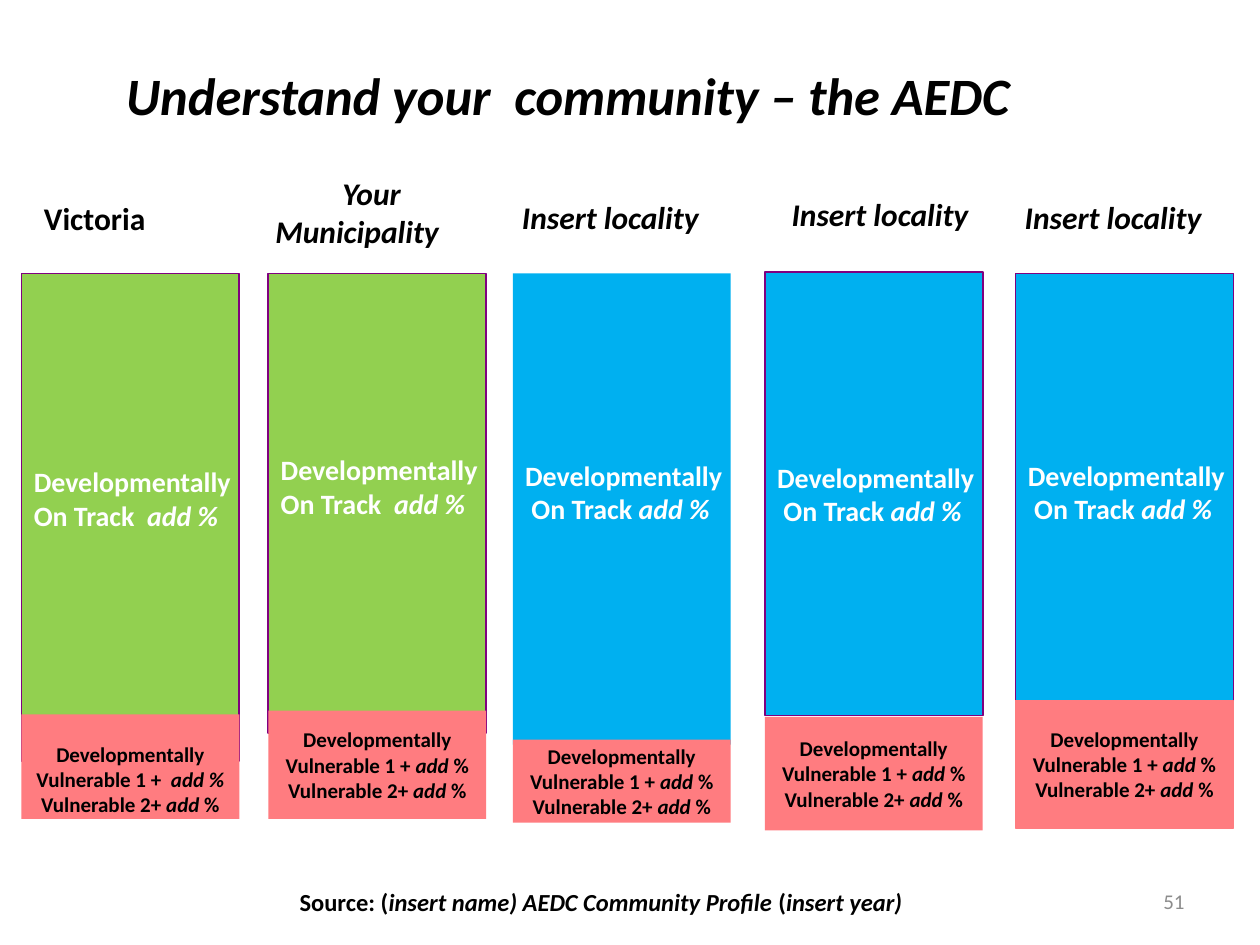
from dataclasses import dataclass
from typing import Optional

from pptx import Presentation
from pptx.dml.color import RGBColor
from pptx.enum.shapes import MSO_SHAPE
from pptx.enum.text import MSO_ANCHOR as ANCHOR, MSO_AUTO_SIZE as FIT, PP_ALIGN as ALIGN
from pptx.util import Inches, Pt

BLACK = RGBColor(0x00, 0x00, 0x00)
WHITE = RGBColor(0xFF, 0xFF, 0xFF)
GREY = RGBColor(0x8C, 0x8C, 0x8C)
GREEN = RGBColor(0x92, 0xD0, 0x50)
BLUE = RGBColor(0x00, 0xB0, 0xF0)
PINK = RGBColor(0xFF, 0x7C, 0x80)
PURPLE = RGBColor(0x80, 0x00, 0x80)

COLS, ROWS = 100, 75
BAR_W = 17.3


@dataclass
class Bar:
    left: float
    top: float
    height: float
    fill: RGBColor
    edge: Optional[RGBColor]
    lift: float
    low_top: float
    low_height: float
    low_edge: Optional[RGBColor] = None
    low_drop: float = 0
    track: str = " On Track "
    first: tuple = (("Vulnerable 1 + ", False), ("add ", True), ("%", False))


class Deck:
    font = "Calibri"

    def __init__(self, prs):
        self.prs = prs
        self.s = prs.slides.add_slide(prs.slide_layouts[5])

    def box(self, left, top, width, height):
        cw, rh = self.prs.slide_width / COLS, self.prs.slide_height / ROWS
        return [round(v) for v in (left * cw, top * rh, width * cw, height * rh)]

    def add_text(self, tf, lines, size, color=BLACK, bold=True, align=ALIGN.CENTER,
                 anchor=ANCHOR.MIDDLE, wrap=False, indents=()):
        tf.auto_size = FIT.NONE
        tf.word_wrap = wrap
        tf.vertical_anchor = anchor
        for i, runs in enumerate(lines):
            p = tf.add_paragraph() if i else tf.paragraphs[0]
            p.alignment = align
            if i < len(indents):
                p._p.get_or_add_pPr().set("marR", str(Inches(indents[i])))
            for text, italic in runs:
                r = p.add_run()
                r.text = text
                r.font.name = self.font
                r.font.size = Pt(size)
                r.font.bold = bold
                r.font.italic = italic
                r.font.color.rgb = color

    def title(self, box, text):
        sp = self.s.shapes.title
        sp.left, sp.top, sp.width, sp.height = self.box(*box)
        self.add_text(sp.text_frame, [[(text, True)]], 30, align=ALIGN.LEFT,
                      anchor=ANCHOR.TOP, wrap=True)

    def label(self, box, lines, size, **style):
        sp = self.s.shapes.add_textbox(*self.box(*box))
        self.add_text(sp.text_frame, lines, size, **style)

    def block(self, box, fill, edge, lines, size, drop=0, **style):
        sp = self.s.shapes.add_shape(MSO_SHAPE.RECTANGLE, *self.box(*box))
        sp.shadow.inherit = False
        sp.fill.solid()
        sp.fill.fore_color.rgb = fill
        if edge is None:
            sp.line.fill.background()
        else:
            sp.line.color.rgb = edge
            sp.line.width = Pt(1)
        tf = sp.text_frame
        tf.margin_top = Inches(max(drop, 0))
        tf.margin_bottom = Inches(max(-drop, 0))
        self.add_text(tf, lines, size, **style)

    def bar(self, b):
        head = [("Developmentally", False)]
        self.block((b.left, b.top, BAR_W, b.height), b.fill, b.edge,
                   [head, [(b.track, False), ("add %", True)]], 16,
                   drop=-b.lift, color=WHITE, align=ALIGN.LEFT)
        second = [("Vulnerable 2+ ", False), ("add ", True), ("%", False)]
        self.block((b.left, b.low_top, BAR_W, b.low_height), PINK, b.low_edge,
                   [head, b.first, second], 12, drop=b.low_drop)


BARS = [
    Bar(1.7, 21.7, 38.7, GREEN, PURPLE, 0.3, 56.7, 8.3, low_drop=0.2, track="On Track  ",
        first=(("Vulnerable 1 +  ", False), ("add %", True))),
    Bar(21.3, 21.7, 36.5, GREEN, PURPLE, 0.27, 56.4, 8.6, track="On Track  "),
    Bar(40.7, 21.7, 37.4, BLUE, None, 0.27, 58.7, 6.6),
    Bar(60.7, 21.6, 35.2, BLUE, PURPLE, 0, 56.9, 9),
    Bar(80.6, 21.7, 34.7, BLUE, PURPLE, 0, 55.6, 10.1, low_edge=PINK),
]
LOCALITIES = [(41.8, 16), (63.2, 15.8), (81.7, 16)]


def main():
    prs = Presentation()
    prs.slide_width, prs.slide_height = Inches(10), Inches(7.5)
    deck = Deck(prs)
    deck.title((9, 4.5, 85.1, 6.1), "Understand your  community – the AEDC")
    for b in BARS:
        deck.bar(b)
    deck.label((2.5, 15.3, 12.5, 4), [[("Victoria", False)]], 18,
               align=ALIGN.LEFT, anchor=ANCHOR.TOP, wrap=True)
    deck.label((22, 15, 15, 3.6), [[("Your", True)], [("Municipality", True)]], 18,
               indents=(0, 0.23))
    for left, top in LOCALITIES:
        deck.label((left, top, 15, 2.4), [[("Insert locality", True)]], 18, indents=(0.17,))
    deck.label((28, 66.6, 39.4, 10),
               [[("Source: (", False), ("insert name) AEDC Community Profile ", True),
                 ("(", False), ("insert year)", True)]], 14)
    deck.label((71.7, 69.5, 23.3, 4), [[("51", False)]], 12, color=GREY, bold=False,
               align=ALIGN.RIGHT, wrap=True)
    prs.save("out.pptx")


if __name__ == "__main__":
    main()
